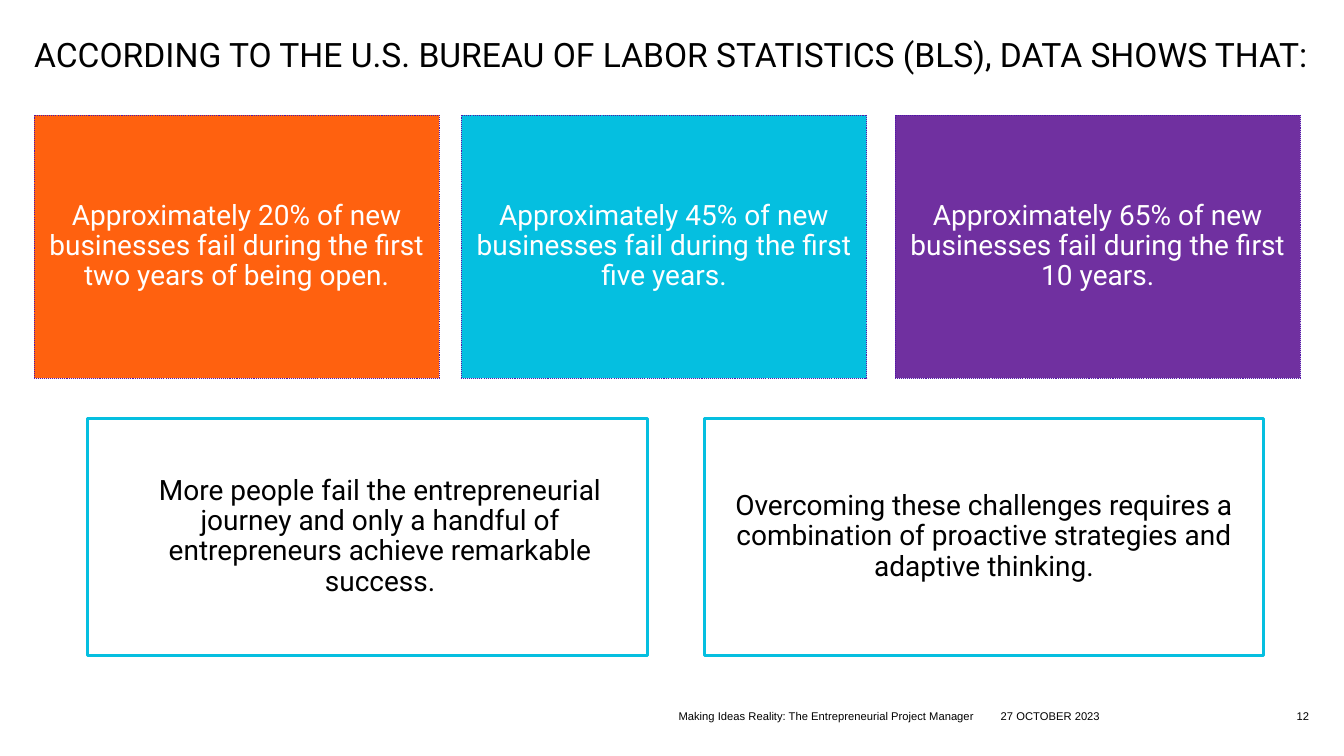
from dataclasses import dataclass

from lxml import etree
from pptx import Presentation
from pptx.dml.color import RGBColor
from pptx.enum.dml import MSO_LINE
from pptx.enum.shapes import MSO_SHAPE
from pptx.enum.text import MSO_ANCHOR, MSO_AUTO_SIZE, PP_ALIGN
from pptx.oxml.ns import qn
from pptx.util import Cm, Pt

RECTANGLE = MSO_SHAPE.RECTANGLE
DOTTED = MSO_LINE.ROUND_DOT
NO_AUTOFIT = MSO_AUTO_SIZE.NONE
MIDDLE, BOTTOM = MSO_ANCHOR.MIDDLE, MSO_ANCHOR.BOTTOM
LEFT, CENTER, RIGHT = PP_ALIGN.LEFT, PP_ALIGN.CENTER, PP_ALIGN.RIGHT
COMPARISON_LAYOUT = 4


@dataclass(frozen=True)
class Theme:
    heading_font: str = "Roboto"
    footer_font: str = "Arial"
    title_size: int = 24
    body_size: int = 20
    footer_size: int = 8
    black: str = "000000"
    white: str = "FFFFFF"
    orange: str = "FF610F"
    cyan: str = "05BFE0"
    purple: str = "7030A0"
    card_edge: str = "5115A9"


class SlideBuilder:
    def __init__(self, slide, theme):
        self.slide = slide
        self.theme = theme

    def place(self, shape, left, top, width, height):
        shape.left, shape.top = Cm(left), Cm(top)
        shape.width, shape.height = Cm(width), Cm(height)

    def outline(self, shape, color, width):
        shape.line.color.rgb = RGBColor.from_string(color)
        shape.line.width = Pt(width)

    def set_text(self, shape, text, font, size, color, align, anchor, spacing=1.0, indent=0):
        frame = shape.text_frame
        frame.text = text
        frame.word_wrap = True
        frame.auto_size = NO_AUTOFIT
        frame.vertical_anchor = anchor
        frame.margin_left = frame.margin_right = 0
        frame.margin_top = frame.margin_bottom = 0
        paragraph = frame.paragraphs[0]
        properties = paragraph._p.get_or_add_pPr()
        properties.set("marL", str(Cm(indent)))
        properties.set("indent", "0")
        etree.SubElement(properties, qn("a:buNone"))
        paragraph.alignment = align
        paragraph.line_spacing = spacing
        paragraph.space_before = Pt(0)
        paragraph.font.name = font
        paragraph.font.size = Pt(size)
        paragraph.font.bold = False
        paragraph.font.color.rgb = RGBColor.from_string(color)

    def title(self, text, *bounds):
        heading = self.slide.shapes.title
        self.place(heading, *bounds)
        self.set_text(heading, text, self.theme.heading_font, self.theme.title_size,
                      self.theme.black, LEFT, MIDDLE)

    def card(self, placeholder, text, color, *bounds):
        self.place(placeholder, *bounds)
        placeholder.fill.solid()
        placeholder.fill.fore_color.rgb = RGBColor.from_string(color)
        self.outline(placeholder, self.theme.card_edge, 0.75)
        placeholder.line.dash_style = DOTTED
        self.set_text(placeholder, text, self.theme.heading_font, self.theme.body_size,
                      self.theme.white, CENTER, MIDDLE, 0.9)

    def takeaway(self, text, indent, *bounds):
        box = self.slide.shapes.add_shape(RECTANGLE, *map(Cm, bounds))
        box.shadow.inherit = False
        box.fill.background()
        self.outline(box, self.theme.cyan, 2.25)
        self.set_text(box, text, self.theme.heading_font, self.theme.body_size,
                      self.theme.black, CENTER, MIDDLE, 0.9, indent)

    def footer(self, text, align, *bounds):
        box = self.slide.shapes.add_textbox(*map(Cm, bounds))
        self.set_text(box, text, self.theme.footer_font, self.theme.footer_size,
                      self.theme.black, align, BOTTOM)


def main():
    deck = Presentation()
    deck.slide_width, deck.slide_height = Cm(33.87), Cm(19.05)
    slide = deck.slides.add_slide(deck.slide_layouts[COMPARISON_LAYOUT])
    theme = Theme()
    builder = SlideBuilder(slide, theme)

    builder.title(
        "ACCORDING TO THE U.S. BUREAU OF LABOR STATISTICS (BLS), DATA SHOWS THAT:",
        0.86, 0.84, 32.12, 1.04)

    failure_rates = [
        ("Approximately 20% of new businesses fail during the first two years of being open.",
         theme.orange, 0.86),
        ("Approximately 45% of new businesses fail during the first five years.",
         theme.cyan, 11.63),
        ("Approximately 65% of new businesses fail during the first 10 years.",
         theme.purple, 22.56),
    ]
    bodies = list(slide.placeholders)[1:]
    for body, (text, color, left) in zip(bodies, failure_rates):
        builder.card(body, text, color, left, 2.9, 10.21, 6.63)
    for unused in bodies[len(failure_rates):]:
        unused.element.getparent().remove(unused.element)

    takeaways = [
        ("More people fail the entrepreneurial journey and only a handful of "
         "entrepreneurs achieve remarkable success.", 0.64, 2.21),
        ("Overcoming these challenges requires a combination of proactive strategies "
         "and adaptive thinking.", 0, 17.75),
    ]
    for text, indent, left in takeaways:
        builder.takeaway(text, indent, left, 10.54, 14.1, 5.97)

    footers = [
        ("Making Ideas Reality: The Entrepreneurial Project Manager", LEFT, 17.1, 7.77),
        ("27 OCTOBER 2023", LEFT, 25.22, 5.05),
        ("12", RIGHT, 31.85, 1.14),
    ]
    for text, align, left, width in footers:
        builder.footer(text, align, left, 17.65, width, 0.56)

    deck.save("out.pptx")


if __name__ == "__main__":
    main()
